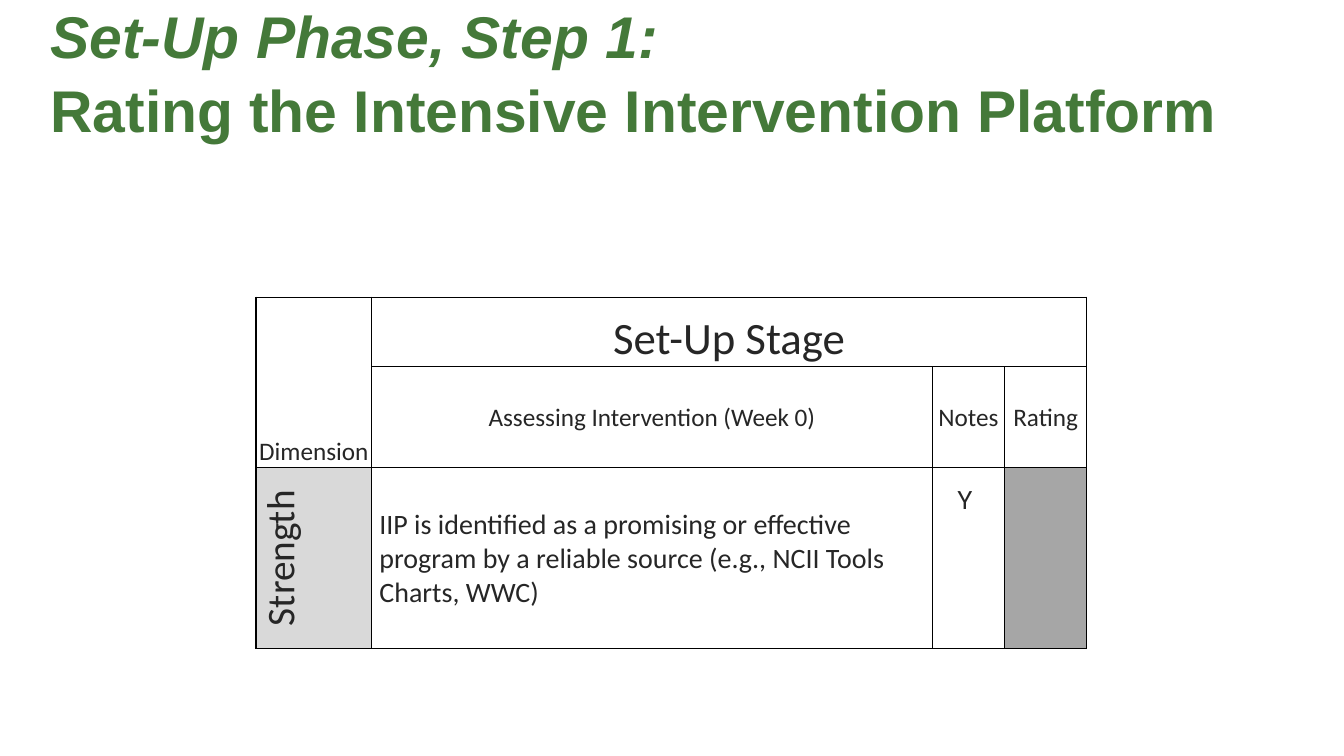
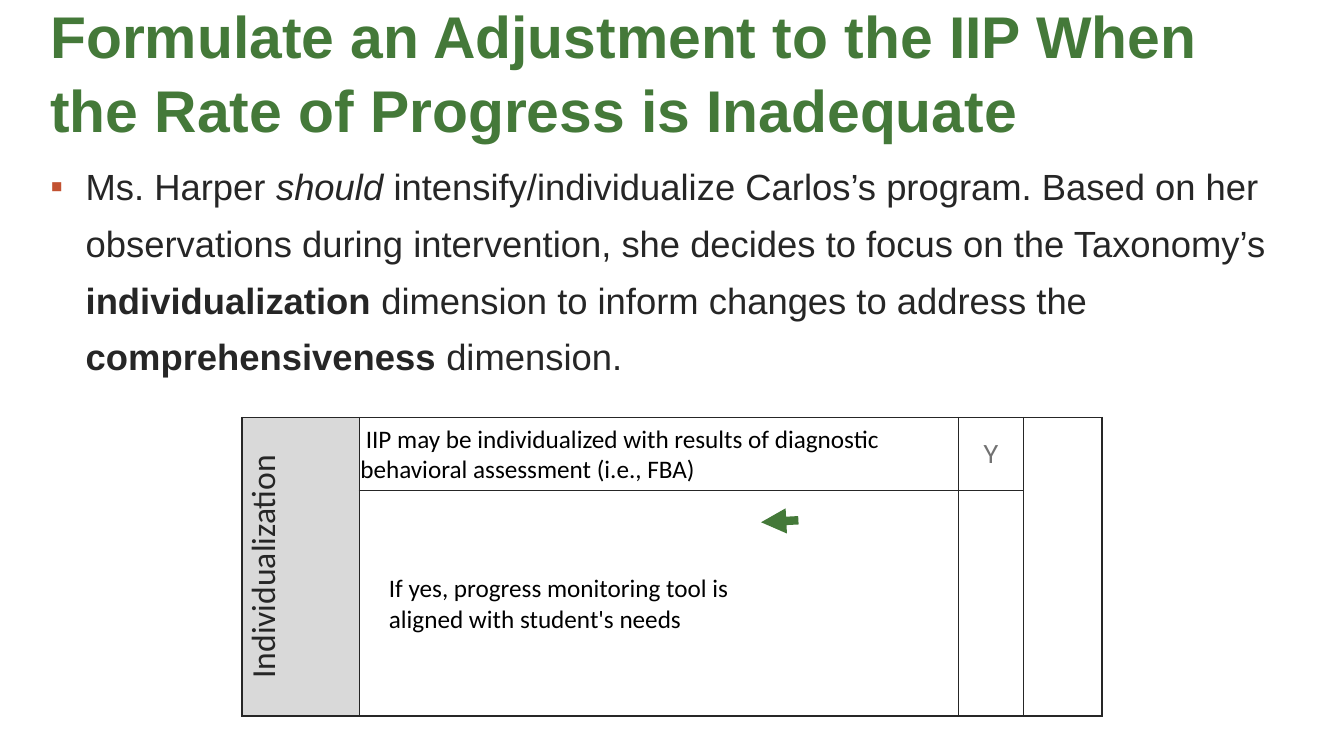
from dataclasses import dataclass

from lxml import etree
from pptx import Presentation
from pptx import util as u
from pptx.dml.color import RGBColor
from pptx.enum import shapes, text
from pptx.oxml import ns

Cm, Pt = u.Cm, u.Pt
CENTER = text.PP_ALIGN.CENTER
MIDDLE, BOTTOM = text.MSO_ANCHOR.MIDDLE, text.MSO_ANCHOR.BOTTOM


@dataclass(frozen=True)
class Theme:
    green: str = "447939"
    ink: str = "262626"
    black: str = "000000"
    muted: str = "727272"
    bullet: str = "C25131"
    white: str = "FFFFFF"
    label_fill: str = "D9D9D9"
    rating_fill: str = "A6A6A6"
    head_font: str = "Arial"
    table_font: str = "Calibri"
    mark_font: str = "Roboto"
    title: int = 42
    stage: int = 32
    dimension: int = 28
    body: int = 26
    label: int = 24
    detail: int = 20
    small: int = 18


THEME = Theme()


def add_xml(parent, tag, **attributes):
    return etree.SubElement(parent, ns.qn(tag), attributes)


def add_span(para, content, size=THEME.small, font=THEME.table_font,
             color=THEME.ink, bold=False, italic=False):
    span = para.add_run()
    span.text = content
    span.font.size = Pt(size)
    span.font.name = font
    span.font.bold = bold
    span.font.italic = italic
    span.font.color.rgb = RGBColor.from_string(color)
    return span


def set_indent(para, left, first):
    properties = para._p.get_or_add_pPr()
    properties.set("marL", str(Cm(left)))
    properties.set("indent", str(Cm(first)))
    return properties


class SlideBuilder:
    def __init__(self, theme):
        self.theme = theme
        self.deck = Presentation()
        self.deck.slide_width, self.deck.slide_height = Cm(33.87), Cm(19.05)
        self.page = None

    def new_page(self):
        self.page = self.deck.slides.add_slide(self.deck.slide_layouts[6])

    def text_box(self, left, top, width, height, inset=0, anchor=None):
        box = self.page.shapes.add_textbox(Cm(left), Cm(top), Cm(width), Cm(height))
        frame = box.text_frame
        frame.word_wrap = True
        frame.margin_left = frame.margin_right = Cm(inset)
        frame.margin_top = frame.margin_bottom = Cm(inset / 2)
        if anchor is not None:
            frame.vertical_anchor = anchor
        return frame

    def title(self, *lines):
        frame = self.text_box(1.27, 0, 31.32, 3.56, anchor=MIDDLE)
        for index, (content, italic) in enumerate(lines):
            para = frame.add_paragraph() if index else frame.paragraphs[0]
            para.line_spacing = 1.05
            add_span(para, content, size=self.theme.title, font=self.theme.head_font,
                     color=self.theme.green, bold=True, italic=italic)

    def bullet(self, *spans):
        para = self.text_box(1.27, 3.81, 31.32, 12.07).paragraphs[0]
        para.line_spacing = 1.3
        properties = set_indent(para, 0.89, -0.89)
        color = add_xml(properties, "a:buClr")
        add_xml(color, "a:srgbClr", val=self.theme.bullet)
        add_xml(properties, "a:buFont", typeface=self.theme.head_font)
        add_xml(properties, "a:buChar", char="▪")
        for content, style in spans:
            add_span(para, content, size=self.theme.body,
                     font=self.theme.head_font, **style)

    def table(self, left, top, columns, rows, border, merges):
        table = self.page.shapes.add_table(
            len(rows), len(columns), Cm(left), Cm(top),
            Cm(sum(columns)), Cm(sum(rows))).table
        table.first_row = table.horz_banding = False
        for column, width in zip(table.columns, columns):
            column.width = Cm(width)
        for row, height in zip(table.rows, rows):
            row.height = Cm(height)
        for cell in table.iter_cells():
            self.fill(cell, self.theme.white)
            self.borders(cell, border)
        for first, last in merges:
            table.cell(*first).merge(table.cell(*last))
        return table

    def fill(self, cell, color):
        cell.fill.solid()
        cell.fill.fore_color.rgb = RGBColor.from_string(color)

    def borders(self, cell, color):
        properties = cell._tc.get_or_add_tcPr()
        for index, side in enumerate(("L", "R", "T", "B")):
            line = add_xml(properties, f"a:ln{side}", w=str(Pt(1)))
            solid = add_xml(line, "a:solidFill")
            add_xml(solid, "a:srgbClr", val=color)
            properties.insert(index, line)

    def cell_text(self, cell, *lines, align=CENTER, anchor=MIDDLE,
                  left=0.0, first=0.0, **style):
        cell.margin_left = cell.margin_right = cell.margin_top = Cm(0.03)
        cell.margin_bottom = 0
        cell.vertical_anchor = anchor
        for index, content in enumerate(lines):
            frame = cell.text_frame
            para = frame.add_paragraph() if index else frame.paragraphs[0]
            para.alignment = align
            set_indent(para, left, first)
            add_span(para, content, **style)

    def side_label(self, cell, content, size):
        self.fill(cell, self.theme.label_fill)
        self.cell_text(cell, content, size=size)
        cell._tc.get_or_add_tcPr().set("vert", "vert270")

    def arrow(self, start, end):
        line = self.page.shapes.add_connector(
            shapes.MSO_CONNECTOR.STRAIGHT, *map(Cm, start + end))
        line.line.color.rgb = RGBColor.from_string(self.theme.green)
        line.line.width = Pt(6)
        add_xml(line.line._get_or_add_ln(), "a:tailEnd", type="triangle")
        add_xml(line._element.spPr, "a:effectLst")


def rating_page(builder):
    theme = builder.theme
    builder.new_page()
    builder.title(("Set-Up Phase, Step 1:", True),
                  ("Rating the Intensive Intervention Platform", False))
    table = builder.table(
        6.45, 7.49, (2.92, 14.12, 1.83, 2.06), (1.75, 2.54, 4.57), theme.black,
        (((0, 0), (1, 0)), ((0, 1), (0, 3))))
    builder.cell_text(table.cell(0, 0), "Dimension", anchor=BOTTOM)
    builder.cell_text(table.cell(0, 1), "Set-Up Stage", anchor=BOTTOM,
                      size=theme.stage)
    headings = ("Assessing Intervention (Week 0)", "Notes", "Rating")
    for column, heading in enumerate(headings, 1):
        builder.cell_text(table.cell(1, column), heading)
    builder.side_label(table.cell(2, 0), "Strength", theme.dimension)
    builder.cell_text(
        table.cell(2, 1),
        "IIP is identified as a promising or effective program by a reliable "
        "source (e.g., NCII Tools Charts, WWC)",
        align=text.PP_ALIGN.LEFT, left=0.16, size=theme.detail)
    builder.fill(table.cell(2, 3), theme.rating_fill)
    mark = builder.text_box(23.88, 12.07, 2.21, 1.02, inset=0.25)
    add_span(mark.paragraphs[0], "Y", font=theme.mark_font)


def adjustment_page(builder):
    theme = builder.theme
    builder.new_page()
    table = builder.table(
        6.1, 10.52, (2.95, 15.11, 1.63, 1.98), (1.85, 5.66), theme.ink,
        (((0, 0), (1, 0)), ((0, 3), (1, 3))))
    builder.side_label(table.cell(0, 0), "Individualization", theme.label)
    left = {"align": text.PP_ALIGN.LEFT, "color": theme.black}
    builder.cell_text(
        table.cell(0, 1),
        "IIP may be individualized with results of diagnostic behavioral "
        "assessment (i.e., FBA)", first=0.14, **left)
    builder.cell_text(table.cell(0, 2), "Y", font=theme.mark_font,
                      color=theme.muted)
    builder.cell_text(table.cell(1, 1), "If yes, progress monitoring tool is",
                      "aligned with student's needs", left=0.72, **left)
    builder.title(("Formulate an Adjustment to the IIP When the Rate of "
                   "Progress is Inadequate", False))
    builder.bullet(
        ("Ms. Harper ", {}),
        ("should", {"italic": True}),
        (" intensify/individualize Carlos’s program. Based on her observations "
         "during intervention, she decides to focus on the Taxonomy’s ", {}),
        ("individualization ", {"bold": True}),
        ("dimension to inform changes to address the ", {}),
        ("comprehensiveness", {"bold": True}),
        (" dimension.", {}))
    builder.arrow((20.12, 13.11), (19.18, 13.16))


def main():
    builder = SlideBuilder(THEME)
    rating_page(builder)
    adjustment_page(builder)
    builder.deck.save("out.pptx")


if __name__ == "__main__":
    main()
